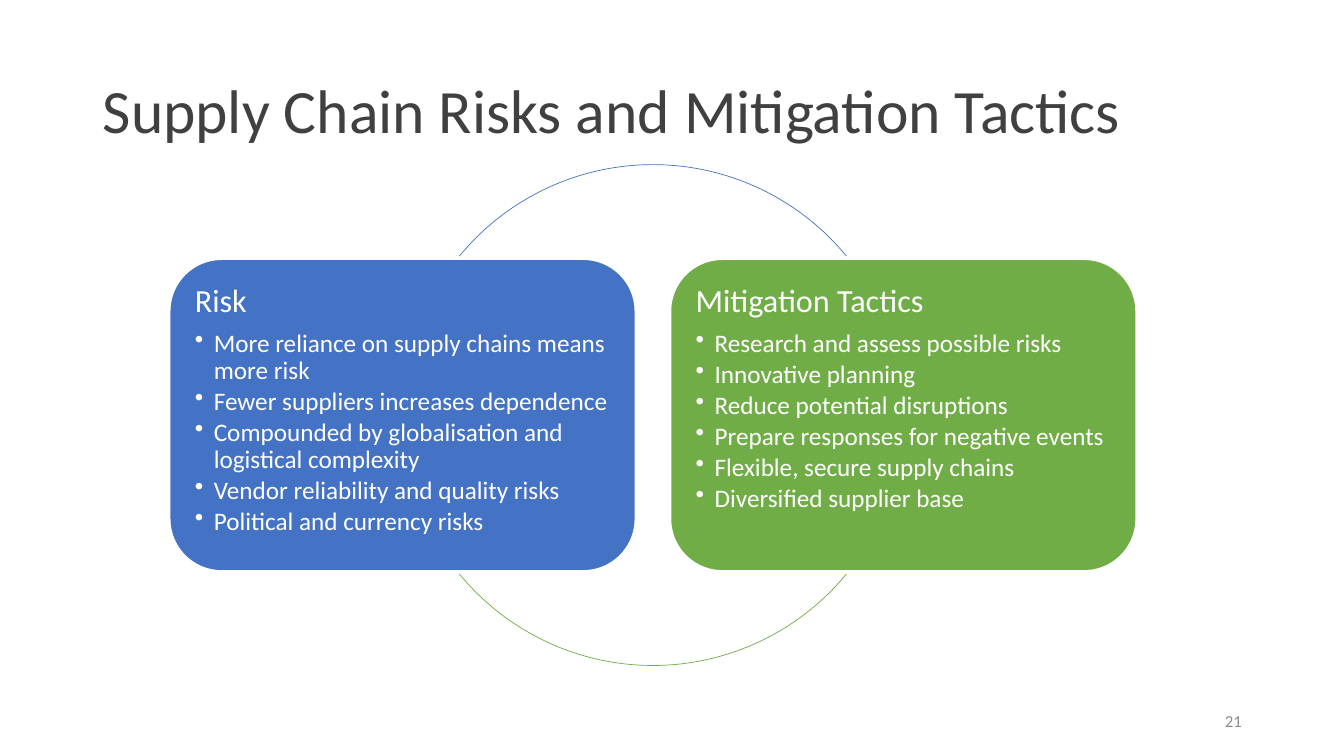
from lxml.etree import SubElement
from pptx import Presentation
from pptx.dml.color import RGBColor
from pptx.enum.shapes import MSO_SHAPE as Preset
from pptx.enum.text import MSO_ANCHOR as Anchor, PP_ALIGN as Align
from pptx.oxml.ns import qn
from pptx.util import Cm, Pt

COLORS = {"title": "404041", "number": "8C8C8C", "risk": "4472C4",
          "tactics": "70AD47", "white": "FFFFFF"}
TITLE = "Supply Chain Risks and Mitigation Tactics"
CARDS = [
    ("risk", "Risk", [
        "More reliance on supply chains means more risk",
        "Fewer suppliers increases dependence",
        "Compounded by globalisation and logistical complexity",
        "Vendor reliability and quality risks",
        "Political and currency risks"]),
    ("tactics", "Mitigation Tactics", [
        "Research and assess possible risks",
        "Innovative planning",
        "Reduce potential disruptions",
        "Prepare responses for negative events",
        "Flexible, secure supply chains",
        "Diversified supplier base"]),
]
CARD_WIDTH, CARD_HEIGHT, CARD_PITCH = 11.73, 7.85, 12.62
CARD_INSET, RING_SIZE = 0.38, 12.62
ARC_SPANS = [(219.4, 320.6), (39.4, 140.6)]


def color(name):
    """Return the named colour."""
    return RGBColor.from_string(COLORS[name])


def add_text_box(page, box, anchor=Anchor.TOP):
    """Add a wrapping text box and return its text frame."""
    frame = page.shapes.add_textbox(*map(Cm, box)).text_frame
    frame.word_wrap = True
    frame.vertical_anchor = anchor
    return frame


def write(para, text, size, color_name, **formats):
    """Write one Calibri paragraph with the given paragraph formats."""
    for name, value in formats.items():
        setattr(para, name, value)
    span = para.add_run()
    span.text = text
    for name, value in {"name": "Calibri", "size": Pt(size)}.items():
        setattr(span.font, name, value)
    span.font.color.rgb = color(color_name)


def add_bullet(para):
    """Give a paragraph a hanging round bullet."""
    properties = para._p.get_or_add_pPr()
    properties.set("marL", str(Cm(0.48)))
    properties.set("indent", str(-Cm(0.48)))
    SubElement(properties, qn("a:buChar")).set("char", "•")


def add_card(page, box, fill, heading, points):
    """Draw a rounded card with its heading and bullet points."""
    left, top, width, height = box
    card = page.shapes.add_shape(Preset.ROUNDED_RECTANGLE, *map(Cm, box))
    card.shadow.inherit = False
    card.fill.solid()
    card.fill.fore_color.rgb = color(fill)
    card.line.color.rgb = color("white")
    card.line.width = Pt(1)
    frame = add_text_box(page, (left + CARD_INSET, top + CARD_INSET,
                                width - 2 * CARD_INSET, height - 2 * CARD_INSET))
    for side in ("left", "top", "right", "bottom"):
        setattr(frame, f"margin_{side}", Cm(0.25))
    write(frame.paragraphs[0], heading, 23, "white",
          line_spacing=0.9, space_after=Pt(8))
    for point in points:
        para = frame.add_paragraph()
        add_bullet(para)
        write(para, point, 18, "white", line_spacing=0.9, space_after=Pt(2.7))


def add_arc(page, box, line, span):
    """Draw the part of a circle between two angles in degrees."""
    arc = page.shapes.add_shape(Preset.ARC, *map(Cm, box))
    arc.shadow.inherit = False
    arc.fill.background()
    arc.line.color.rgb = color(line)
    arc.line.width = Pt(0.5)
    for index, angle in enumerate(span):
        arc.adjustments[index] = angle * 0.6


def add_cycle(page, box):
    """Place the two cards side by side with an arc above and below."""
    left, top, width, height = box
    ring = (left + (width - RING_SIZE) / 2, top, RING_SIZE, RING_SIZE)
    card_top = top + (height - CARD_HEIGHT) / 2
    for index, (name, heading, points) in enumerate(CARDS):
        card_box = (left + index * CARD_PITCH, card_top, CARD_WIDTH, CARD_HEIGHT)
        add_card(page, card_box, name, heading, points)
        add_arc(page, ring, name, ARC_SPANS[index])


def add_title(page, box):
    """Write the slide title."""
    frame = add_text_box(page, box, Anchor.MIDDLE)
    write(frame.paragraphs[0], TITLE, 44, "title", line_spacing=0.9)


def add_number(page, box):
    """Write the slide number."""
    frame = add_text_box(page, box, Anchor.MIDDLE)
    write(frame.paragraphs[0], "21", 12, "number", alignment=Align.RIGHT)


def main():
    """Build and save the deck."""
    deck = Presentation()
    deck.slide_width, deck.slide_height = Cm(33.87), Cm(19.05)
    page = deck.slides.add_slide(deck.slide_layouts[6])
    add_title(page, (2.34, 1.02, 29.21, 3.68))
    add_number(page, (23.93, 17.65, 7.62, 1.02))
    add_cycle(page, (4.28, 4.15, CARD_PITCH + CARD_WIDTH, RING_SIZE))
    deck.save("out.pptx")


if __name__ == "__main__":
    main()
